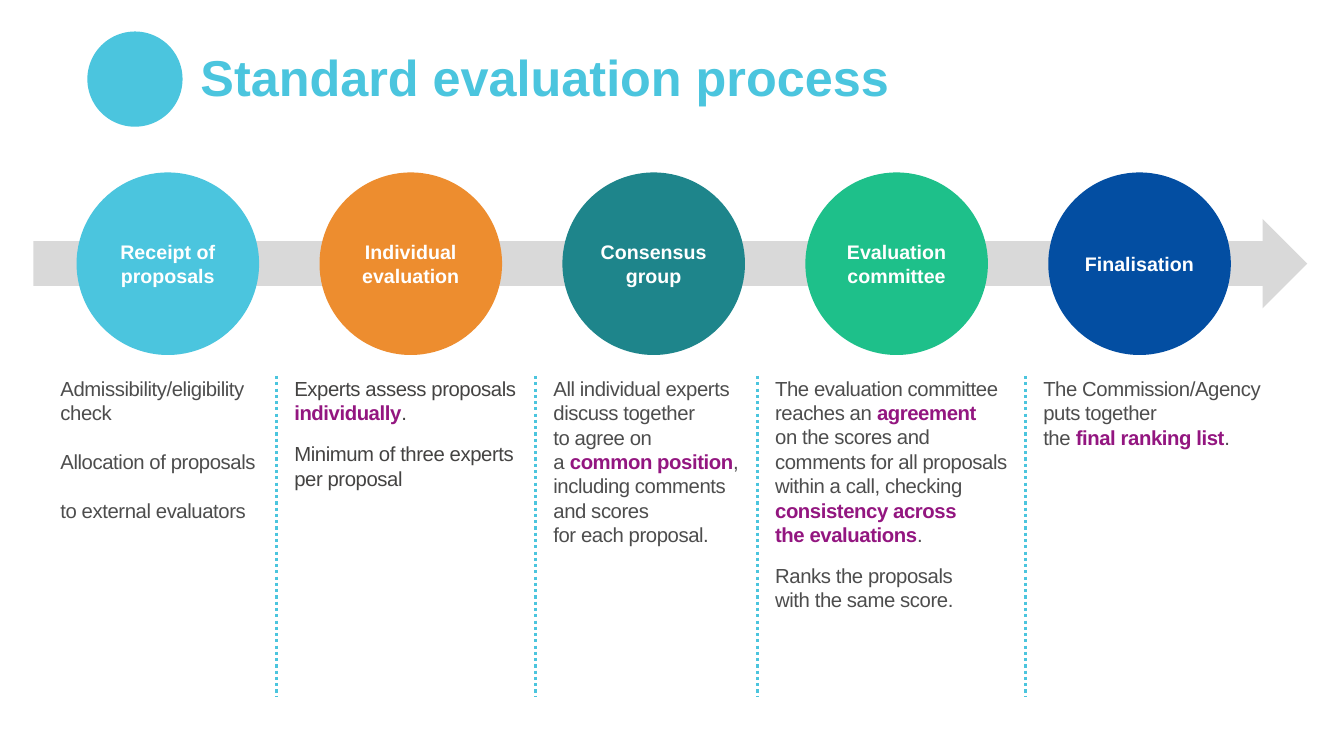
from copy import deepcopy
from dataclasses import dataclass

from pptx import Presentation
from pptx.dml.color import RGBColor
from pptx.enum.dml import MSO_LINE
from pptx.enum.shapes import MSO_CONNECTOR, MSO_SHAPE
from pptx.enum.text import MSO_ANCHOR, MSO_AUTO_SIZE, PP_ALIGN
from pptx.oxml.ns import qn
from pptx.util import Pt

ELLIPSE, ARROW = MSO_SHAPE.OVAL, MSO_SHAPE.RIGHT_ARROW
STRAIGHT, DOTTED = MSO_CONNECTOR.STRAIGHT, MSO_LINE.ROUND_DOT
MIDDLE, LEFT, CENTER = MSO_ANCHOR.MIDDLE, PP_ALIGN.LEFT, PP_ALIGN.CENTER


@dataclass(frozen=True)
class Theme:
    font: str = "Arial"
    sky: str = "4BC5DE"
    orange: str = "ED8D2F"
    teal: str = "1E858B"
    green: str = "1EC08A"
    navy: str = "034EA2"
    band: str = "D9D9D9"
    body: str = "4D4D4D"
    dark: str = "444342"
    accent: str = "931680"
    white: str = "FFFFFF"
    title_size: float = 36
    label_size: float = 14
    body_size: float = 14.5
    body_tracking: str = "-30"


T = Theme()

# Layout in points
CIRCLE_LEFT, CIRCLE_TOP, CIRCLE_SIZE, CIRCLE_PITCH = 54.72, 123.2, 130.4, 173.52
TEXT_TOP, DIVIDER_BOTTOM, DIVIDER_GAP = 268.56, 497.5, 4

# Steps: label, fill, text left, width, height, text colour, space between
# paragraphs, paragraphs. Words between asterisks are emphasised.
STEPS = [
    ("Receipt of proposals", T.sky, 34.56, 158.4, 93.6, T.body, 17.4,
     ["Admissibility/eligibility check", "Allocation of proposals",
      "to external evaluators"]),
    ("Individual evaluation", T.orange, 201.6, 177.12, 87.84, T.dark, 12,
     ["Experts assess proposals *individually*.",
      "Minimum of three experts per proposal"]),
    ("Consensus group", T.teal, 386.64, 149.76, 128.88, T.body, 12,
     ["All individual experts discuss together\nto agree on\n"
      "a *common position*, including comments and scores\n"
      "for each proposal."]),
    ("Evaluation committee", T.green, 545.04, 183.6, 175.68, T.body, 12,
     ["The evaluation committee reaches an *agreement\n*"
      "on the scores and comments for all proposals within a call, checking "
      "*consistency across\nthe evaluations*.",
      "Ranks the proposals\nwith the same score."]),
    ("Finalisation", T.navy, 736.56, 173.52, 58.32, T.body, 12,
     ["The Commission/Agency puts together\nthe *final ranking list*."]),
]


def rgb(color):
    return RGBColor.from_string(color)


def set_font(font, size, color, bold):
    font.name, font.size, font.bold = T.font, Pt(size), bold
    font.color.rgb = rgb(color)


def set_insets(tf, left, top, right, bottom):
    tf.margin_left, tf.margin_top = Pt(left), Pt(top)
    tf.margin_right, tf.margin_bottom = Pt(right), Pt(bottom)


def add_title(s, text):
    sp = s.shapes.title
    sp.left, sp.top, sp.width, sp.height = Pt(136), Pt(33.8), Pt(754), Pt(46.8)
    tf = sp.text_frame
    tf.text = text
    tf.word_wrap, tf.vertical_anchor = True, MIDDLE
    tf.auto_size = MSO_AUTO_SIZE.NONE
    set_insets(tf, 7.2, 3.6, 7.2, 3.6)
    p = tf.paragraphs[0]
    p.alignment, p.line_spacing = LEFT, 0.9
    set_font(p.font, T.title_size, T.sky, True)


def add_plain_shape(s, kind, left, top, width, height, fill):
    sp = s.shapes.add_shape(kind, Pt(left), Pt(top), Pt(width), Pt(height))
    sp.shadow.inherit = False
    sp.fill.solid()
    sp.fill.fore_color.rgb = rgb(fill)
    sp.line.fill.background()
    return sp


def add_step_circle(s, left, label, fill):
    sp = add_plain_shape(s, ELLIPSE, left, CIRCLE_TOP, CIRCLE_SIZE,
                         CIRCLE_SIZE, fill)
    tf = sp.text_frame
    tf.text = label
    tf.word_wrap, tf.vertical_anchor = True, MIDDLE
    set_insets(tf, 5, 3.6, 5, 3.6)
    p = tf.paragraphs[0]
    p.alignment = CENTER
    set_font(p.font, T.label_size, T.white, True)


def add_marked_text(p, text, color):
    """Fill a paragraph; line feeds become breaks, *...* is emphasised."""
    for i, part in enumerate(text.split("*")):
        strong = i % 2 == 1
        for j, line in enumerate(part.split("\n")):
            if j:
                p.add_line_break()
                p._p.findall(qn("a:br"))[-1].append(deepcopy(r._r.rPr))
            if line:
                r = p.add_run()
                r.text = line
                set_font(r.font, T.body_size, T.accent if strong else color,
                         strong)
                r._r.rPr.set("spc", T.body_tracking)


def add_step_text(s, left, width, height, color, gap, paragraphs):
    sp = s.shapes.add_textbox(Pt(left), Pt(TEXT_TOP), Pt(width), Pt(height))
    tf = sp.text_frame
    tf.word_wrap = True
    set_insets(tf, 8.64, 0, 8.64, 5.76)
    for i, text in enumerate(paragraphs):
        p = tf.add_paragraph() if i else tf.paragraphs[0]
        if i:
            p.space_before = Pt(gap)
        add_marked_text(p, text, color)


def add_divider(s, x):
    line = s.shapes.add_connector(STRAIGHT, Pt(x), Pt(TEXT_TOP), Pt(x),
                                  Pt(DIVIDER_BOTTOM))
    line.line.color.rgb = rgb(T.sky)
    line.line.width = Pt(2.25)
    line.line.dash_style = DOTTED
    sp_pr = line._element.spPr
    sp_pr.append(sp_pr.makeelement(qn("a:effectLst"), {}))


def main():
    prs = Presentation()
    prs.slide_width, prs.slide_height = Pt(960), Pt(540)
    s = prs.slides.add_slide(prs.slide_layouts[5])

    # Heading
    add_title(s, "Standard evaluation process")
    add_plain_shape(s, ELLIPSE, 62.4, 22.5, 68, 68, T.sky)

    # Process arrow behind the circles
    add_plain_shape(s, ARROW, 23.8, 156.3, 910, 64, T.band)

    # Steps, with a divider before each but the first
    for i, (label, fill, left, *text) in enumerate(STEPS):
        add_step_circle(s, CIRCLE_LEFT + i * CIRCLE_PITCH, label, fill)
        add_step_text(s, left, *text)
        if i:
            add_divider(s, left - DIVIDER_GAP)

    prs.save("out.pptx")


if __name__ == "__main__":
    main()
